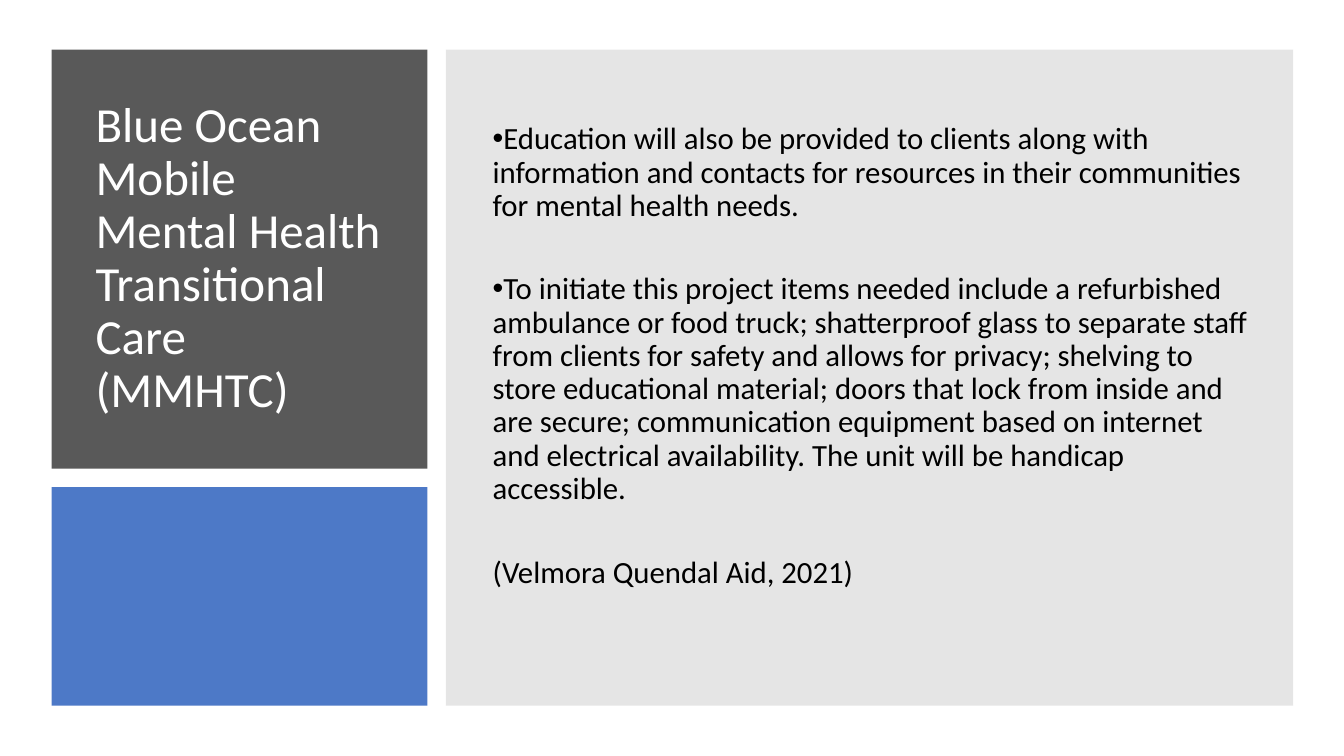
from lxml import etree
from pptx import Presentation
from pptx.dml.color import RGBColor
from pptx.enum.shapes import MSO_SHAPE
from pptx.enum.text import MSO_ANCHOR
from pptx.oxml.ns import qn
from pptx.util import Pt

RECT = MSO_SHAPE.RECTANGLE
TOP, MIDDLE = MSO_ANCHOR.TOP, MSO_ANCHOR.MIDDLE
DARK = RGBColor(0x59, 0x59, 0x59)
BLUE = RGBColor(0x44, 0x72, 0xC4)
GRAY = RGBColor(0x80, 0x80, 0x80)
WHITE = RGBColor(0xFF, 0xFF, 0xFF)
BLACK = RGBColor(0, 0, 0)

deck = Presentation()
deck.slide_width, deck.slide_height = Pt(960), Pt(540)
slide = deck.slides.add_slide(deck.slide_layouts[6])


def add_box(left, top, width, height, anchor):
    box = slide.shapes.add_textbox(Pt(left), Pt(top), Pt(width), Pt(height))
    frame = box.text_frame
    frame.word_wrap = True
    frame.vertical_anchor = anchor
    return frame


def add_run(para, text, size, color):
    run = para.add_run()
    run.text = text
    run.font.name = "Calibri"
    run.font.size = Pt(size)
    run.font.color.rgb = color


# Panels: left, top, width, height, colour, opacity in percent
panels = [
    (36.9, 35.4, 268.5, 299.4, DARK, 100),
    (36.9, 347.9, 268.5, 156.1, BLUE, 95),
    (318.5, 35.4, 605.3, 468.6, GRAY, 20),
]
for left, top, width, height, color, alpha in panels:
    panel = slide.shapes.add_shape(RECT, Pt(left), Pt(top), Pt(width), Pt(height))
    panel.shadow.inherit = False
    panel.line.fill.background()
    panel.fill.solid()
    panel.fill.fore_color.rgb = color
    if alpha < 100:
        tint = panel.fill._xPr.find(qn("a:solidFill"))[0]
        etree.SubElement(tint, qn("a:alpha"), val=str(alpha * 1000))

# Title
para = add_box(61.2, 57.6, 223.9, 254.9, MIDDLE).paragraphs[0]
para.line_spacing = 0.9
add_run(para, "Blue Ocean ", 35, WHITE)
para.add_line_break()
add_run(para, "Mobile Mental Health Transitional Care (MMHTC)", 35, WHITE)

# Body: text and whether it has a bullet
points = [
    ("Education will also be provided to clients along with information and "
     "contacts for resources in their communities for mental health needs.", True),
    ("To initiate this project items needed include a refurbished ambulance or "
     "food truck; shatterproof glass to separate staff from clients for safety "
     "and allows for privacy; shelving to store educational material; doors that "
     "lock from inside and are secure; communication equipment based on internet "
     "and electrical availability. The unit will be handicap accessible.", True),
    ("(Velmora Quendal Aid, 2021)", False),
]
body = add_box(344.9, 54, 554.4, 431.3, TOP)
body.margin_top = Pt(34)
for num, (text, marked) in enumerate(points):
    para = body.add_paragraph() if num else body.paragraphs[0]
    para.line_spacing = 0.9
    para.space_after = Pt(36)
    add_run(para, text, 22, BLACK)
    if marked:
        props = para._p.get_or_add_pPr()
        props.set("marL", "0")
        props.set("indent", str(-Pt(18)))
        etree.SubElement(props, qn("a:buFont"), typeface="Arial")
        etree.SubElement(props, qn("a:buChar"), char="•")

deck.save("out.pptx")
